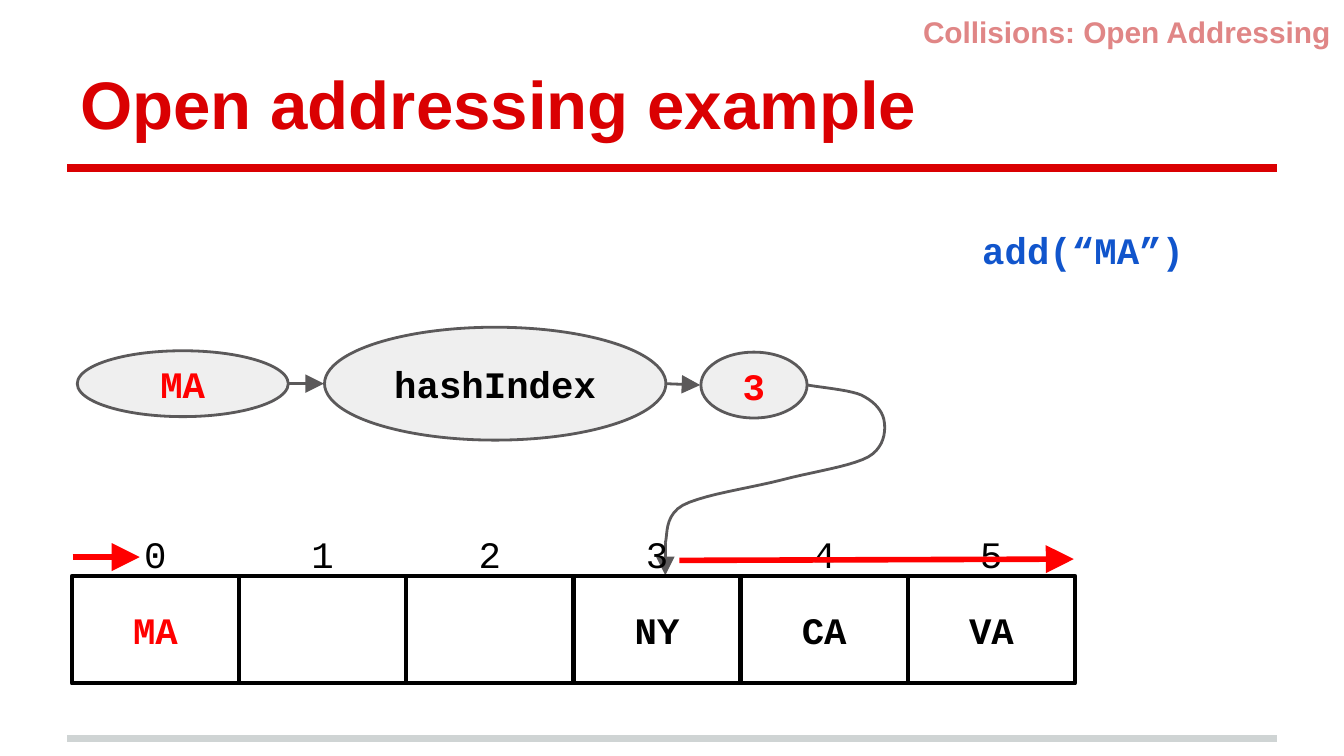
from dataclasses import dataclass

from lxml.etree import SubElement
from pptx import Presentation
from pptx.dml.color import RGBColor
from pptx.enum.shapes import MSO_CONNECTOR, MSO_SHAPE
from pptx.enum.text import MSO_ANCHOR, PP_ALIGN
from pptx.oxml.ns import qn
from pptx.util import Inches, Pt


@dataclass(frozen=True)
class Theme:
    red: str = "DA0002"
    pale_red: str = "E08686"
    highlight: str = "FF0000"
    blue: str = "1155CC"
    black: str = "000000"
    gray: str = "5B595A"
    light: str = "EFEFEF"
    footer: str = "CFD4D4"
    sans: str = "Arial"
    mono: str = "Courier New"
    title: int = 36
    body: int = 20
    topic: int = 16


theme = Theme()
prs = Presentation()
prs.slide_width = Inches(10)
prs.slide_height = prs.slide_width * 9 // 16
s = prs.slides.add_slide(prs.slide_layouts[6])
U = prs.slide_width / 100  # square grid unit: 100 columns across the slide


def add_box(x, y, w, h, text="", color=theme.black, size=theme.body, font=theme.mono,
            bold=True, align=PP_ALIGN.CENTER, anchor=MSO_ANCHOR.MIDDLE,
            shape=None, fill=None, line=None, width=1.5, parent=s):
    """Add a text box, or a preset shape with centred text, in grid units."""
    box = [round(v * U) for v in (x, y, w, h)]
    if shape is None:
        sp = parent.shapes.add_textbox(*box)
    else:
        sp = parent.shapes.add_shape(shape, *box)
        sp.shadow.inherit = False
        sp.line.color.rgb = RGBColor.from_string(line)
        sp.line.width = Pt(width)
        if fill:
            sp.fill.solid()
            sp.fill.fore_color.rgb = RGBColor.from_string(fill)
        else:
            sp.fill.background()
    tf = sp.text_frame
    tf.word_wrap = True
    tf.vertical_anchor = anchor
    tf.margin_left = tf.margin_right = tf.margin_top = tf.margin_bottom = round(U)
    if text:
        p = tf.paragraphs[0]
        p.text, p.alignment = text, align
        p.font.name, p.font.size, p.font.bold = font, Pt(size), bold
        p.font.color.rgb = RGBColor.from_string(color)


def add_line(x1, y1, x2, y2, color=theme.gray, width=1.5, arrow=True):
    """Add a straight line in grid units, by default with a large arrowhead."""
    ends = [round(v * U) for v in (x1, y1, x2, y2)]
    cxn = s.shapes.add_connector(MSO_CONNECTOR.STRAIGHT, *ends)
    cxn.line.color.rgb = RGBColor.from_string(color)
    cxn.line.width = Pt(width)
    if arrow:
        ln = cxn._element.spPr.find(qn("a:ln"))
        SubElement(ln, qn("a:tailEnd"), type="triangle", w="lg", len="lg")
    SubElement(cxn._element.spPr, qn("a:effectLst"))


# Rules and title
for y, color in ((54.95, theme.footer), (12.5, theme.red)):
    add_line(5, y, 95, y, color, 4, arrow=False)
add_box(5, 2.25, 93.8, 9.4, "Open addressing example", theme.red, theme.title,
        theme.sans, align=PP_ALIGN.LEFT, anchor=MSO_ANCHOR.BOTTOM)

# Hashing steps
for x, y, w, h, text, color in (
    (24.15, 24.35, 25.4, 8.4, "hashIndex", theme.black),
    (5.75, 26.1, 15.7, 4.9, "MA", theme.highlight),
    (52.15, 26.2, 7.9, 4.9, "3", theme.highlight),
):
    add_box(x, y, w, h, text, color, shape=MSO_SHAPE.OVAL,
            fill=theme.light, line=theme.gray)
for x1, x2, y2 in ((21.5, 24.1, 28.55), (49.5, 52.1, 28.65)):
    add_line(x1, 28.55, x2, y2)

# Curve from the hash value down to its slot, sampled from Bezier pieces
start = (60.1, 28.65)
pieces = (
    ((60.8, 28.8), (63.2, 29), (64.1, 29.4)),
    ((65.1, 29.9), (65.7, 30.6), (65.8, 31.4)),
    ((65.9, 32.1), (65.8, 33.3), (64.6, 34)),
    ((63.3, 34.7), (60.5, 35.1), (58.2, 35.7)),
    ((55.9, 36.3), (52.3, 36.8), (50.8, 37.6)),
    ((49.4, 38.4), (49.7, 39.9), (49.5, 40.4)),
)
STEPS = 10
points, p0 = [], start
for p1, p2, p3 in pieces:
    for t in (i / STEPS for i in range(1, STEPS + 1)):
        points.append(tuple(
            ((1 - t)**3 * a + 3 * (1 - t)**2 * t * b + 3 * (1 - t) * t**2 * c + t**3 * d) * U
            for a, b, c, d in zip(p0, p1, p2, p3)))
    p0 = p3
fb = s.shapes.build_freeform(start[0] * U, start[1] * U)
fb.add_line_segments(points, close=False)
curve = fb.convert_to_shape()
curve.shadow.inherit = False
curve.fill.background()
curve.line.color.rgb = RGBColor.from_string(theme.gray)
curve.line.width = Pt(1.5)
add_line(49.5, 40.4, 49.5, 42.8)

# Hash table slots with their indices
LEFT, SLOT = 5.35, 12.44
slots, indices = s.shapes.add_group_shape(), s.shapes.add_group_shape()
for i, key in enumerate(("MA", "", "", "NY", "CA", "VA")):
    x = LEFT + i * SLOT
    add_box(x, 42.85, SLOT, 8, key, theme.highlight if key == "MA" else theme.black,
            shape=MSO_SHAPE.RECTANGLE, line=theme.black, width=2.25, parent=slots)
    add_box(x, 39.9, SLOT, 2.5, str(i), bold=False, parent=indices)

# Probe path: to the end of the table, then around to the first slot
add_line(50.55, 41.7, 79.9, 41.6, theme.highlight, 3)
add_line(5.4, 41.45, 10.4, 41.45, theme.highlight, 3)

# Operation and topic labels
add_box(72.1, 15.9, 20.1, 5.3, "add(“MA”)", theme.blue,
        align=PP_ALIGN.LEFT, anchor=MSO_ANCHOR.TOP)
add_box(65.3, 0, 34.7, 4, "Collisions: Open Addressing", theme.pale_red, theme.topic,
        theme.sans, align=PP_ALIGN.RIGHT, anchor=MSO_ANCHOR.TOP)

prs.save("out.pptx")
